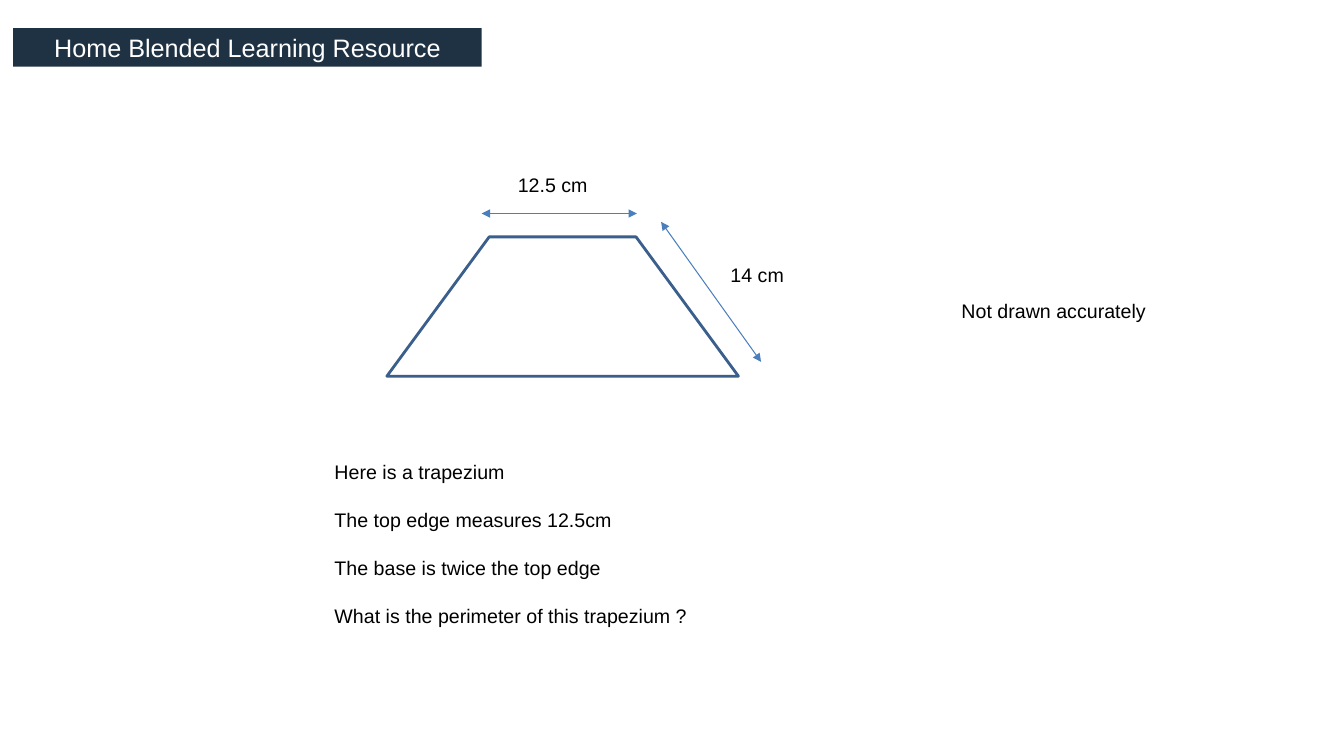
from dataclasses import dataclass

from lxml.etree import SubElement
from pptx import Presentation
from pptx.dml.color import RGBColor
from pptx.enum.shapes import MSO_CONNECTOR, MSO_SHAPE
from pptx.enum.text import MSO_ANCHOR, PP_ALIGN
from pptx.oxml.ns import qn
from pptx.slide import Slide
from pptx.text.text import TextFrame
from pptx.util import Cm, Pt


@dataclass(frozen=True)
class Theme:
    font: str = "Arial"
    navy: RGBColor = RGBColor(0x1F, 0x32, 0x44)
    white: RGBColor = RGBColor(0xFF, 0xFF, 0xFF)
    black: RGBColor = RGBColor(0, 0, 0)
    edge: RGBColor = RGBColor(0x3A, 0x5F, 0x8C)
    arrow: RGBColor = RGBColor(0x4B, 0x7E, 0xBC)
    title: float = 18
    body: float = 14
    gap: float = 17.5


@dataclass(frozen=True)
class Box:
    left: float
    top: float
    width: float
    height: float

    def cm(self) -> tuple[Cm, Cm, Cm, Cm]:
        return Cm(self.left), Cm(self.top), Cm(self.width), Cm(self.height)


@dataclass(frozen=True)
class Label:
    box: Box
    text: str
    wrap: bool = False


@dataclass(frozen=True)
class Arrow:
    start: tuple[float, float]
    end: tuple[float, float]


THEME = Theme()
BANNER = Box(0.33, 0.71, 11.81, 0.97)
SHAPE = Box(9.75, 5.97, 8.86, 3.51)
LABELS = [
    Label(Box(12.8, 4.24, 2.29, 0.86), "12.5 cm"),
    Label(Box(18.16, 6.5, 2.64, 0.86), "14 cm", wrap=True),
    Label(
        Box(8.18, 11.46, 9.45, 4.47),
        "Here is a trapezium\n"
        "The top edge measures 12.5cm\n"
        "The base is twice the top edge\n"
        "What is the perimeter of this trapezium ?",
    ),
    Label(Box(23.98, 7.42, 5.18, 0.86), "Not drawn accurately"),
]
ARROWS = [
    Arrow((12.14, 5.38), (16.05, 5.38)),
    Arrow((19.18, 9.12), (16.66, 5.59)),
]


def style(frame: TextFrame, size: float, color: RGBColor) -> None:
    for i, para in enumerate(frame.paragraphs):
        if i:
            para.space_before = Pt(THEME.gap)
        for run in para.runs:
            run.font.name = THEME.font
            run.font.size = Pt(size)
            run.font.color.rgb = color


def add_banner(slide: Slide) -> None:
    shape = slide.shapes.add_shape(MSO_SHAPE.RECTANGLE, *BANNER.cm())
    shape.shadow.inherit = False
    shape.fill.solid()
    shape.fill.fore_color.rgb = THEME.navy
    shape.line.fill.background()
    frame = shape.text_frame
    frame.text = "Home Blended Learning Resource"
    frame.vertical_anchor = MSO_ANCHOR.MIDDLE
    frame.paragraphs[0].alignment = PP_ALIGN.CENTER
    style(frame, THEME.title, THEME.white)


def add_label(slide: Slide, label: Label) -> None:
    frame = slide.shapes.add_textbox(*label.box.cm()).text_frame
    frame.word_wrap = label.wrap
    frame.text = label.text
    style(frame, THEME.body, THEME.black)


def add_arrow(slide: Slide, arrow: Arrow) -> None:
    ends = [Cm(v) for v in arrow.start + arrow.end]
    line = slide.shapes.add_connector(MSO_CONNECTOR.STRAIGHT, *ends)
    line.line.color.rgb = THEME.arrow
    line.line.width = Pt(0.75)
    # Arrowheads at both ends, no shadow
    props = line.line._get_or_add_ln()
    for tag in ("a:headEnd", "a:tailEnd"):
        SubElement(props, qn(tag), type="triangle")
    SubElement(props.getparent(), qn("a:effectLst"))


def add_figure(slide: Slide) -> None:
    shape = slide.shapes.add_shape(MSO_SHAPE.TRAPEZOID, *SHAPE.cm())
    shape.adjustments[0] = 0.735
    shape.shadow.inherit = False
    shape.fill.solid()
    shape.fill.fore_color.rgb = THEME.white
    shape.line.color.rgb = THEME.edge
    shape.line.width = Pt(2)


def main() -> None:
    deck = Presentation()
    deck.slide_width, deck.slide_height = Cm(33.87), Cm(19.05)
    slide = deck.slides.add_slide(deck.slide_layouts[6])

    # Heading
    add_banner(slide)

    # Measures and question
    for label in LABELS:
        add_label(slide, label)
    for arrow in ARROWS:
        add_arrow(slide, arrow)

    # Trapezium
    add_figure(slide)

    deck.save("out.pptx")


if __name__ == "__main__":
    main()
